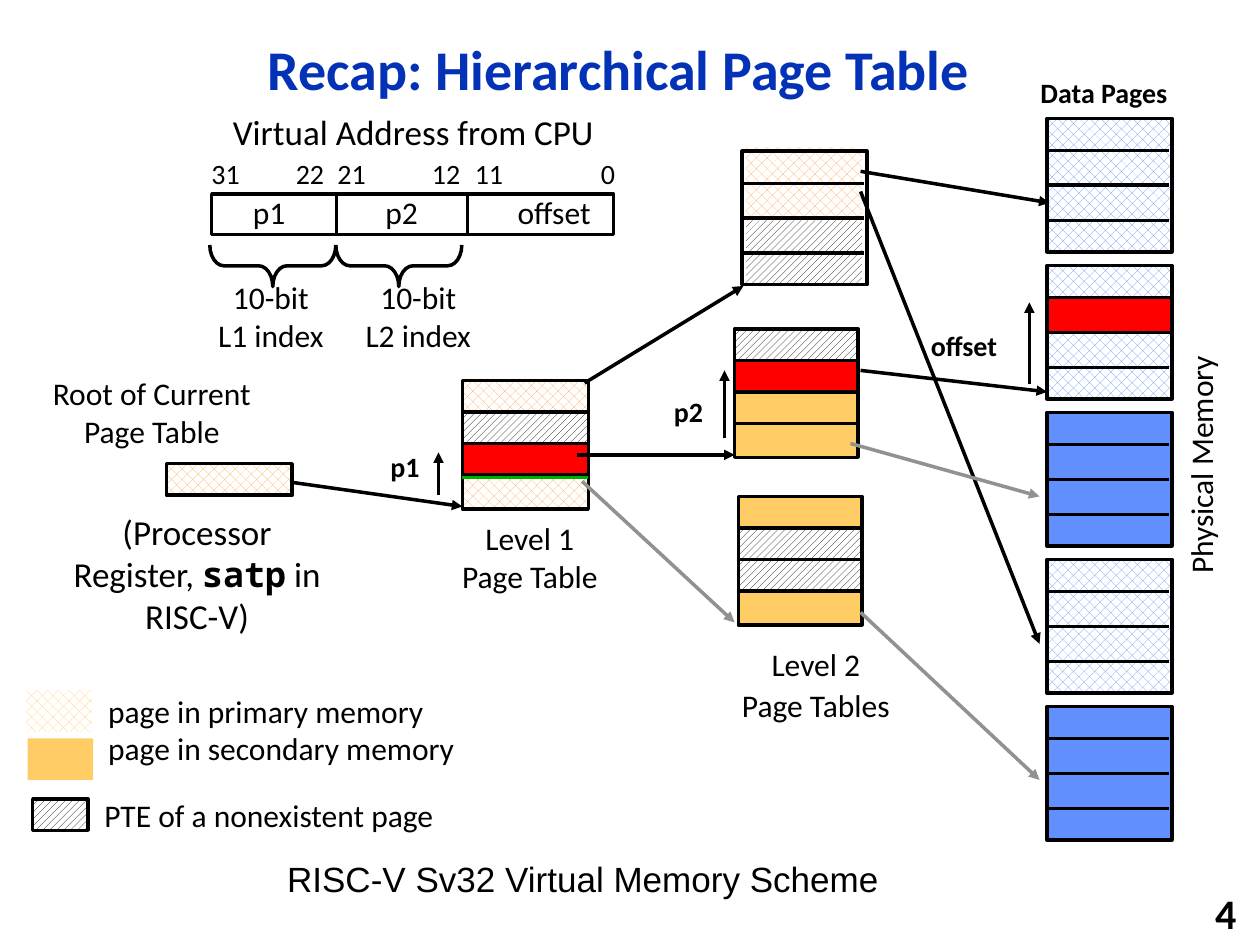
"""Builds a slide that recaps a hierarchical page table on a 100 by 75 grid."""
from dataclasses import dataclass
from typing import NamedTuple, Optional

from lxml import etree
from pptx import Presentation, util as u
from pptx.dml import color as dml
from pptx.enum import dml as patterns, shapes, text
from pptx.oxml import ns

COLUMNS, ROWS = 100, 75
WIDTH, HEIGHT = u.Inches(10), u.Inches(7.5)
LEFT, CENTER, RIGHT = text.PP_ALIGN.LEFT, text.PP_ALIGN.CENTER, text.PP_ALIGN.RIGHT
CHECKED = patterns.MSO_PATTERN.from_xml("pct40")
HATCHED = patterns.MSO_PATTERN.from_xml("wdUpDiag")


class Fill(NamedTuple):
    color: str
    pattern: Optional[int] = None


@dataclass(frozen=True)
class Theme:
    ink: str = "000000"
    paper: str = "FFFFFF"
    title: str = "0332B7"
    swapped: str = "919191"
    divider: str = "00AE00"
    sans: str = "Calibri"
    mono: str = "Noto Sans Mono"
    caption: str = "Arial"
    heading: int = 32
    number: int = 24
    large: int = 20
    body: int = 18
    small: int = 16
    stroke: int = 2
    loaded: Fill = Fill("FFA74F", CHECKED)
    legend: Fill = Fill("FFCC66", CHECKED)
    data: Fill = Fill("618FFD", CHECKED)
    missing: Fill = Fill("000000", HATCHED)
    secondary: Fill = Fill("FFCC66")
    data_out: Fill = Fill("618FFD")
    chosen: Fill = Fill("FF0000")


THEME = Theme()


class Box(NamedTuple):
    column: float
    row: float
    columns: float
    rows: float


class Span(NamedTuple):
    words: str
    font: str = THEME.sans
    bold: bool = False


class Label(NamedTuple):
    box: Box
    paragraphs: tuple
    size: int = THEME.body
    align: int = LEFT
    bold: bool = False
    color: str = THEME.ink
    wrap: bool = False
    middle: bool = False
    rotation: int = 0
    line_spacing: float = 1.0
    gap: int = 0


class Line(NamedTuple):
    start: tuple
    end: tuple
    color: str = THEME.ink
    arrow: bool = False


class Table(NamedTuple):
    column: float
    row: float
    columns: float
    entries: tuple


def across(columns: float) -> int:
    """Turns grid columns into a length."""
    return int(WIDTH * columns / COLUMNS)


def down(rows: float) -> int:
    """Turns grid rows into a length."""
    return int(HEIGHT * rows / ROWS)


def place(box: Box) -> tuple:
    """Gives left, top, width and height of a grid box."""
    return across(box.column), down(box.row), across(box.columns), down(box.rows)


def rgb(color: str) -> dml.RGBColor:
    """Reads a hexadecimal colour."""
    return dml.RGBColor.from_string(color)


def draw_shape(slide, box: Box, fill: Optional[Fill] = None, outlined: bool = True,
               kind: int = shapes.MSO_SHAPE.RECTANGLE):
    """Draws a preset shape with a solid, patterned or empty fill."""
    shape = slide.shapes.add_shape(kind, *place(box))
    shape.shadow.inherit = False
    if fill is None:
        shape.fill.background()
    elif fill.pattern is None:
        shape.fill.solid()
        shape.fill.fore_color.rgb = rgb(fill.color)
    else:
        shape.fill.patterned()
        shape.fill.pattern = fill.pattern
        shape.fill.fore_color.rgb = rgb(fill.color)
        shape.fill.back_color.rgb = rgb(THEME.paper)
    if outlined:
        shape.line.color.rgb = rgb(THEME.ink)
        shape.line.width = u.Pt(THEME.stroke)
    else:
        shape.line.fill.background()
    return shape


def draw_line(slide, line: Line) -> None:
    """Draws a straight line, with an arrowhead at its end if asked."""
    (x1, y1), (x2, y2) = line.start, line.end
    connector = slide.shapes.add_connector(
        shapes.MSO_CONNECTOR.STRAIGHT, across(x1), down(y1), across(x2), down(y2))
    connector.line.color.rgb = rgb(line.color)
    connector.line.width = u.Pt(THEME.stroke)
    if line.arrow:
        etree.SubElement(connector.get_or_add_ln(), ns.qn("a:tailEnd"), type="triangle")
    etree.SubElement(connector.element.spPr, ns.qn("a:effectLst"))


def draw_label(slide, label: Label) -> None:
    """Writes a text box run by run."""
    shape = slide.shapes.add_textbox(*place(label.box))
    shape.rotation = label.rotation
    frame = shape.text_frame
    frame.word_wrap = label.wrap
    frame.vertical_anchor = text.MSO_ANCHOR.MIDDLE if label.middle else text.MSO_ANCHOR.TOP
    for index, content in enumerate(label.paragraphs):
        paragraph = frame.add_paragraph() if index else frame.paragraphs[0]
        paragraph.alignment = label.align
        paragraph.line_spacing = label.line_spacing
        paragraph.space_before = u.Pt(label.gap if index else 0)
        for span in (Span(content),) if isinstance(content, str) else content:
            run = paragraph.add_run()
            run.text = span.words
            run.font.name = span.font
            run.font.size = u.Pt(label.size)
            run.font.bold = label.bold or span.bold
            run.font.color.rgb = rgb(label.color)


def draw_table(slide, table: Table) -> None:
    """Stacks the entries of a page table."""
    for index, fill in enumerate(table.entries):
        draw_shape(slide, Box(table.column, table.row + 2.5 * index, table.columns, 2.7), fill)


def draw_page(slide, column: float, row: float, fill: Optional[Fill]) -> None:
    """Draws a framed page ruled into four rows."""
    draw_shape(slide, Box(column, row, 9.9, 10.6), fill)
    for offset in (2.55, 5.3, 8.1):
        draw_line(slide, Line((column, row + offset), (column + 9.7, row + offset)))


def draw_address(slide) -> None:
    """Draws the virtual address with its fields, bit numbers and braces."""
    draw_shape(slide, Box(16.8, 15.4, 31.9, 3.2), Fill(THEME.paper))
    for column in (26.7, 37.1):
        draw_line(slide, Line((column, 15.5), (column, 18.6)))
    for index, (field, width) in enumerate((("p1", 4.6), ("p2", 4.6), ("offset", 7.8))):
        draw_label(slide, Label(Box(19.1 + 10.5 * index, 14.8, width, 4), (field,)))
    for bit, column in (("31", 15.8), ("22", 22.5), ("21", 25.8),
                        ("12", 33.3), ("11", 36.7), ("0", 46.7)):
        draw_label(slide, Label(Box(column, 11.9, 5, 3.7), (bit,), THEME.small, wrap=True))
    for column, label_column, level in ((20, 16.2, "L1"), (30, 27.9, "L2")):
        brace = draw_shape(slide, Box(column, 16.1, 3.3, 10), kind=shapes.MSO_SHAPE.RIGHT_BRACE)
        brace.rotation = 90
        brace.adjustments[0] = 0.34
        draw_label(slide, Label(Box(label_column, 21.6, 10.6, 7.1),
                                ("10-bit", f"{level} index"), align=CENTER))


TABLES = (
    Table(36.7, 30.2, 10, (THEME.loaded, THEME.missing, THEME.chosen, THEME.loaded)),
    Table(58.3, 26.1, 9.8, (THEME.missing, THEME.chosen, THEME.secondary, THEME.secondary)),
    Table(58.6, 39.4, 9.8, (THEME.secondary, THEME.missing, THEME.missing, THEME.secondary)),
)
PAGES = (THEME.data, THEME.data, THEME.data_out, THEME.data, THEME.data_out)
ARROWS = (
    ((23.3, 38.3), (36.7, 40.2)), ((46.4, 30.4), (59, 22.7)), ((45.8, 36.1), (58.3, 36.1)),
    ((68.3, 13.6), (83.3, 16.1)), ((68.3, 15.2), (82.5, 51.1)), ((68.3, 29.4), (83.1, 31.1)),
    ((34.8, 39.3), (34.8, 35.9)), ((57.5, 34.8), (57.5, 29.4)), ((81.7, 30.5), (81.7, 24)),
)
SWAPPED_ARROWS = (
    ((46.2, 38.2), (58.3, 49.4)), ((67.5, 35.2), (82.5, 39.4)), ((68.3, 48.6), (82.5, 61.9)),
)
REGISTER = (Span("Register, "), Span("satp", THEME.mono, True), Span(" in RISC-V)"))
LABELS = (
    Label(Box(9.2, 1.7, 79.8, 8.1), ("Recap: Hierarchical Page Table",), THEME.heading, CENTER,
          True, THEME.title, True, True, line_spacing=0.9),
    Label(Box(78.3, 70.8, 20.8, 3.2), ("4",), THEME.number, RIGHT, True, middle=True, wrap=True),
    Label(Box(35.5, 40.7, 13.1, 7), ("Level 1", "Page Table"), align=CENTER),
    Label(Box(57.7, 50.7, 14.1, 7.4), ("Level 2", "Page Tables"), align=CENTER, gap=2),
    Label(Box(81.6, 5.5, 12.3, 3.7), ("Data Pages",), THEME.small, bold=True),
    Label(Box(7.6, 54.4, 29.8, 7), ("page in primary memory", "page in secondary memory")),
    Label(Box(7.3, 62.7, 28.5, 4), ("PTE of a nonexistent page",)),
    Label(Box(1.5, 29.2, 21.1, 7), ("Root of Current", "Page Table"), align=CENTER, wrap=True),
    Label(Box(4, 40, 23.3, 11.1), ("(Processor", REGISTER), THEME.large, CENTER, wrap=True),
    Label(Box(30, 35.2, 4.3, 3.7), ("p1",), THEME.small, bold=True),
    Label(Box(52.5, 30.8, 4.4, 3.7), ("p2",), THEME.small, bold=True),
    Label(Box(72.9, 25.6, 7.4, 3.7), ("offset",), THEME.small, bold=True),
    Label(Box(17.5, 8.3, 31, 4.3), ("Virtual Address from CPU",), THEME.large),
    Label(Box(82.6, 34.9, 25.4, 4), ("Physical Memory",), align=CENTER, wrap=True, rotation=270),
    Label(Box(21.8, 67.6, 50.1, 4.4),
          ((Span("RISC-V Sv32 Virtual Memory Scheme", THEME.caption),),), THEME.large),
)


def main() -> None:
    """Builds and saves the slide."""
    presentation = Presentation()
    presentation.slide_width, presentation.slide_height = WIDTH, HEIGHT
    slide = presentation.slides.add_slide(presentation.slide_layouts[6])
    for index, fill in enumerate(PAGES):
        draw_page(slide, 83.1, 9.4 + 11.67 * index, fill)
    draw_shape(slide, Box(83.1, 23.6, 9.9, 2.8), THEME.chosen)
    draw_shape(slide, Box(59.2, 11.7, 9.2, 5.8), THEME.loaded, False)
    draw_shape(slide, Box(59.2, 17.5, 9.2, 5), THEME.missing, False)
    draw_page(slide, 58.9, 12, None)
    for table in TABLES:
        draw_table(slide, table)
    draw_line(slide, Line((36.7, 37.9), (46.7, 37.9), THEME.divider))
    draw_shape(slide, Box(13.2, 36.8, 10, 2.5), THEME.loaded)
    draw_address(slide)
    draw_shape(slide, Box(2.1, 54.8, 5.2, 3.3), THEME.legend, False)
    draw_shape(slide, Box(2.2, 58.6, 5.2, 3.3), THEME.secondary, False)
    draw_shape(slide, Box(2.6, 63.4, 4.4, 2.5), THEME.missing)
    for color, arrows in ((THEME.ink, ARROWS), (THEME.swapped, SWAPPED_ARROWS)):
        for start, end in arrows:
            draw_line(slide, Line(start, end, color, True))
    for label in LABELS:
        draw_label(slide, label)
    presentation.save("out.pptx")


if __name__ == "__main__":
    main()
